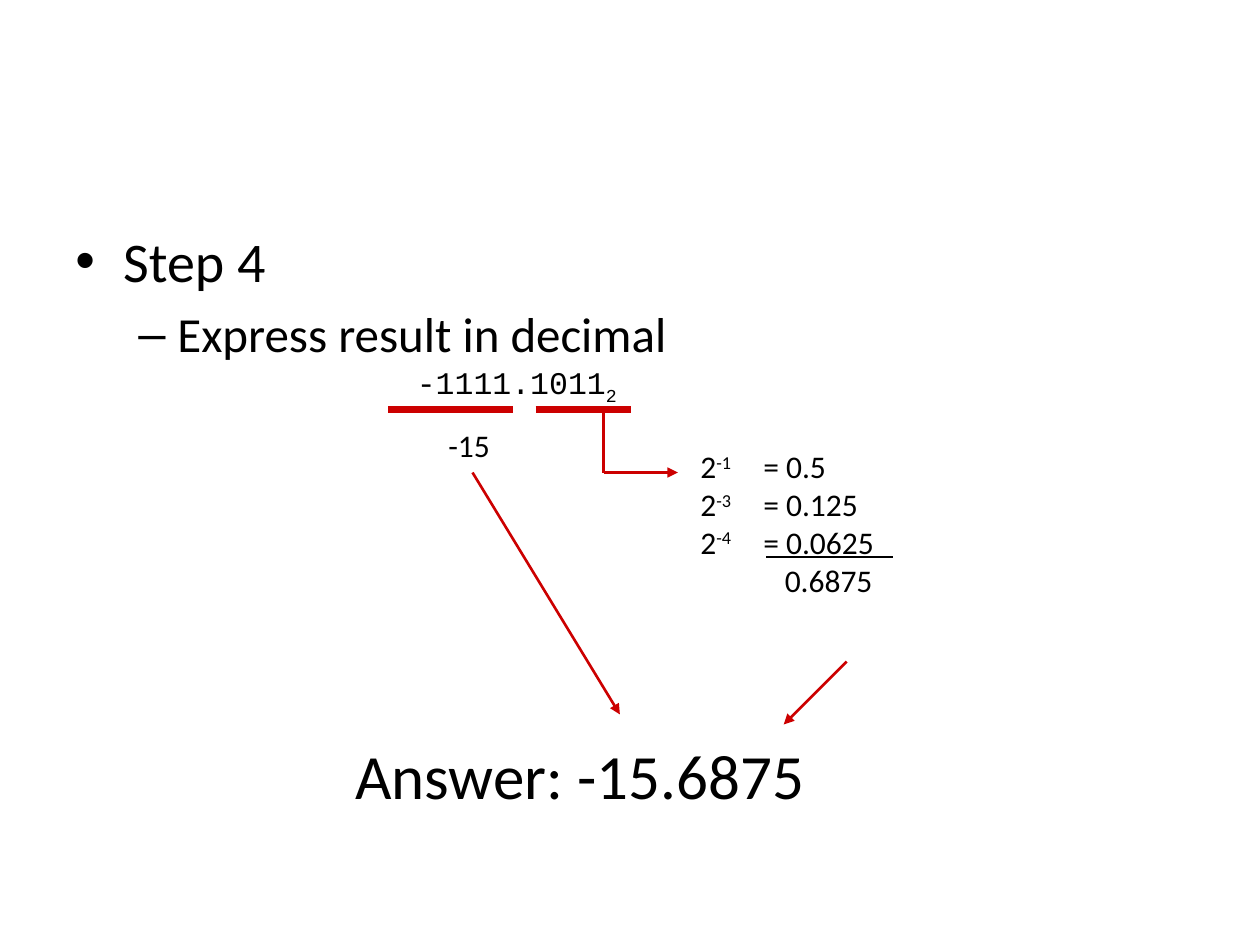
from lxml import etree
from pptx import Presentation
from pptx.dml.color import RGBColor
from pptx.enum import shapes, text
from pptx.oxml import ns
from pptx.util import Inches, Pt

THEME = {
    "ink": RGBColor(0, 0, 0), "accent": RGBColor(0xCC, 0, 0),
    "body": "Calibri", "code": "Courier New",
    "step": 32, "substep": 28, "working": 18, "answer": 36,
    "thin": 1.5, "thick": 4.5,
}

OUTLINE = [
    ("Step 4", "step", "•", 0.38, 0.38),
    ("Express result in decimal", "substep", "–", 0.81, 0.31),
]
BINARY = [("-1111.1011", 0), ("2", -25)]
POWERS = [("-1", "0.5"), ("-3", "0.125"), ("-4", "0.0625")]
FRACTION_SUM = "0.6875"
EQUALS_TAB, SUM_TAB = 0.5, 0.67

LABELS = [
    ((3.21, 2.83, 2.51, 0.5), BINARY, "working", "code", True),
    ((3.46, 3.33, 0.65, 0.5), [("-15", 0)], "working", "body", False),
    ((2.72, 5.8, 3.81, 0.7), [("Answer: -15.6875", 0)], "answer", "body", False),
]
LINES = [
    ((3.08, 3.25), (4.07, 3.25), "accent", "thick", False),
    ((4.25, 3.25), (5.01, 3.25), "accent", "thick", False),
    ((6.08, 4.42), (7.09, 4.42), "ink", "thin", False),
    ((4.79, 3.25), (4.79, 3.75), "accent", "thin", False),
    ((4.79, 3.75), (5.38, 3.75), "accent", "thin", True),
    ((3.75, 3.75), (4.92, 5.67), "accent", "thin", True),
    ((6.72, 5.25), (6.22, 5.75), "accent", "thin", True),
]


def add_xml(parent, tag, **attributes):
    return etree.SubElement(parent, ns.qn(tag), attributes)


def add_box(page, place, wrap):
    box = page.shapes.add_textbox(*map(Inches, place))
    box.text_frame.word_wrap = wrap
    box.text_frame.vertical_anchor = text.MSO_ANCHOR.TOP
    return box.text_frame


def next_para(frame, index):
    return frame.add_paragraph() if index else frame.paragraphs[0]


def add_span(para, words, size, face="body", baseline=0):
    span = para.add_run()
    span.text = words
    span.font.name = THEME[face]
    span.font.size = Pt(THEME[size])
    span.font.color.rgb = THEME["ink"]
    if baseline:
        span.font._element.set("baseline", str(baseline * 1000))


def set_tab(para, position):
    tabs = add_xml(para._p.get_or_add_pPr(), "a:tabLst")
    add_xml(tabs, "a:tab", pos=str(Inches(position)), algn="l")


def add_outline(page):
    frame = add_box(page, (0.5, 1.75, 9, 4.95), True)
    for index, (words, size, bullet, margin, hang) in enumerate(OUTLINE):
        para = next_para(frame, index)
        para.level = index
        para.space_before = Pt(THEME[size] * 0.2)
        properties = para._p.get_or_add_pPr()
        properties.set("marL", str(Inches(margin)))
        properties.set("indent", str(-Inches(hang)))
        add_xml(properties, "a:buFont", typeface="Arial")
        add_xml(properties, "a:buChar", char=bullet)
        add_span(para, words, size)


def add_powers(page):
    frame = add_box(page, (5.46, 3.5, 2.21, 1.7), False)
    for index, (exponent, value) in enumerate(POWERS):
        para = next_para(frame, index)
        set_tab(para, EQUALS_TAB)
        add_span(para, "2", "working")
        add_span(para, exponent, "working", baseline=30)
        add_span(para, f"\t= {value}", "working")
    para = frame.add_paragraph()
    set_tab(para, SUM_TAB)
    add_span(para, f"\t{FRACTION_SUM}", "working")


def add_line(page, start, end, color, weight, arrow):
    line = page.shapes.add_connector(
        shapes.MSO_CONNECTOR.STRAIGHT, *map(Inches, start + end))
    line.line.color.rgb = THEME[color]
    line.line.width = Pt(THEME[weight])
    if arrow:
        add_xml(line.line._get_or_add_ln(), "a:tailEnd", type="triangle")
    add_xml(line._element.spPr, "a:effectLst")


def main():
    deck = Presentation()
    deck.slide_width, deck.slide_height = Inches(10), Inches(7.5)
    page = deck.slides.add_slide(deck.slide_layouts[6])
    add_outline(page)
    for place, spans, size, face, wrap in LABELS:
        para = add_box(page, place, wrap).paragraphs[0]
        for words, baseline in spans:
            add_span(para, words, size, face, baseline)
    add_powers(page)
    for line in LINES:
        add_line(page, *line)
    deck.save("out.pptx")


if __name__ == "__main__":
    main()
